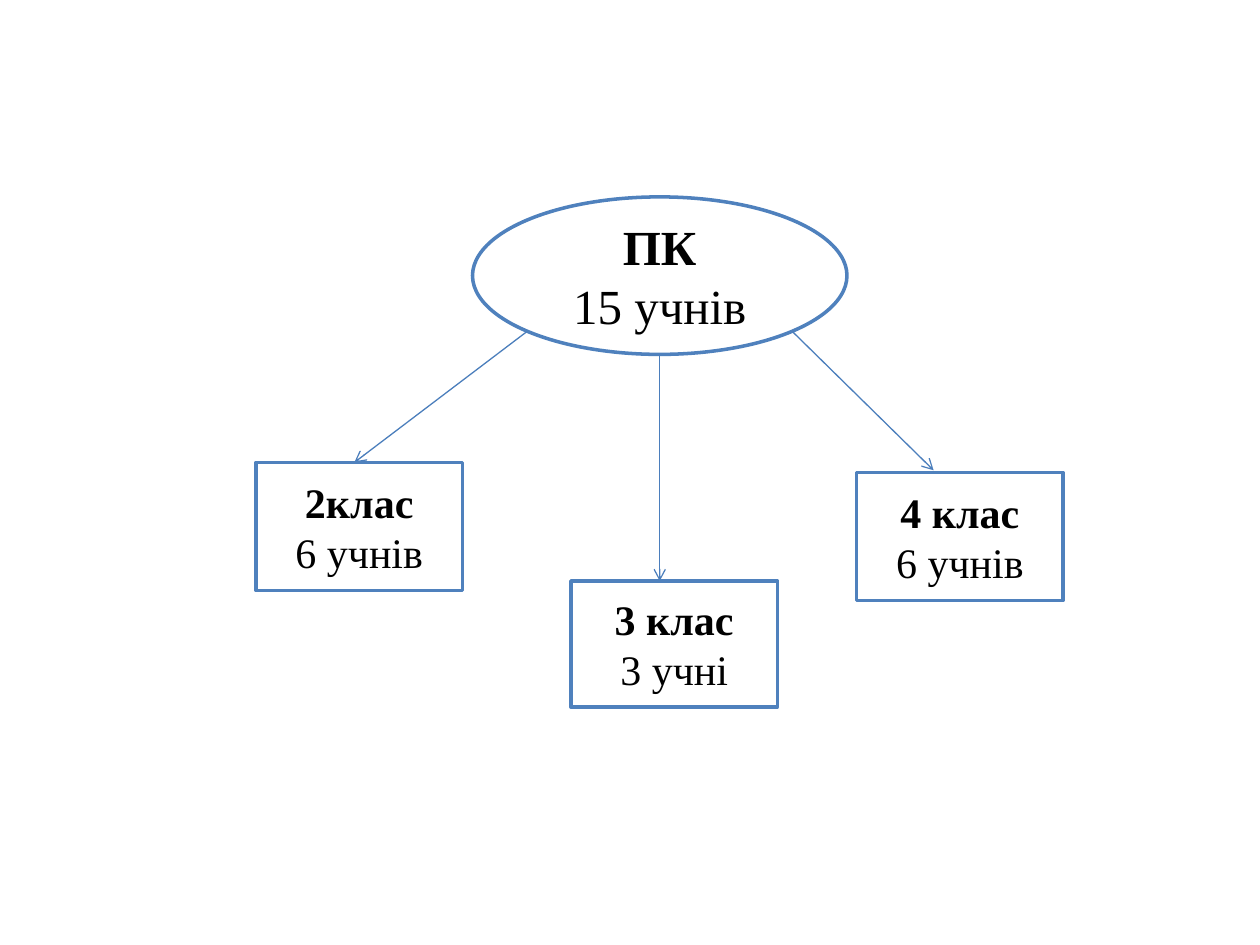
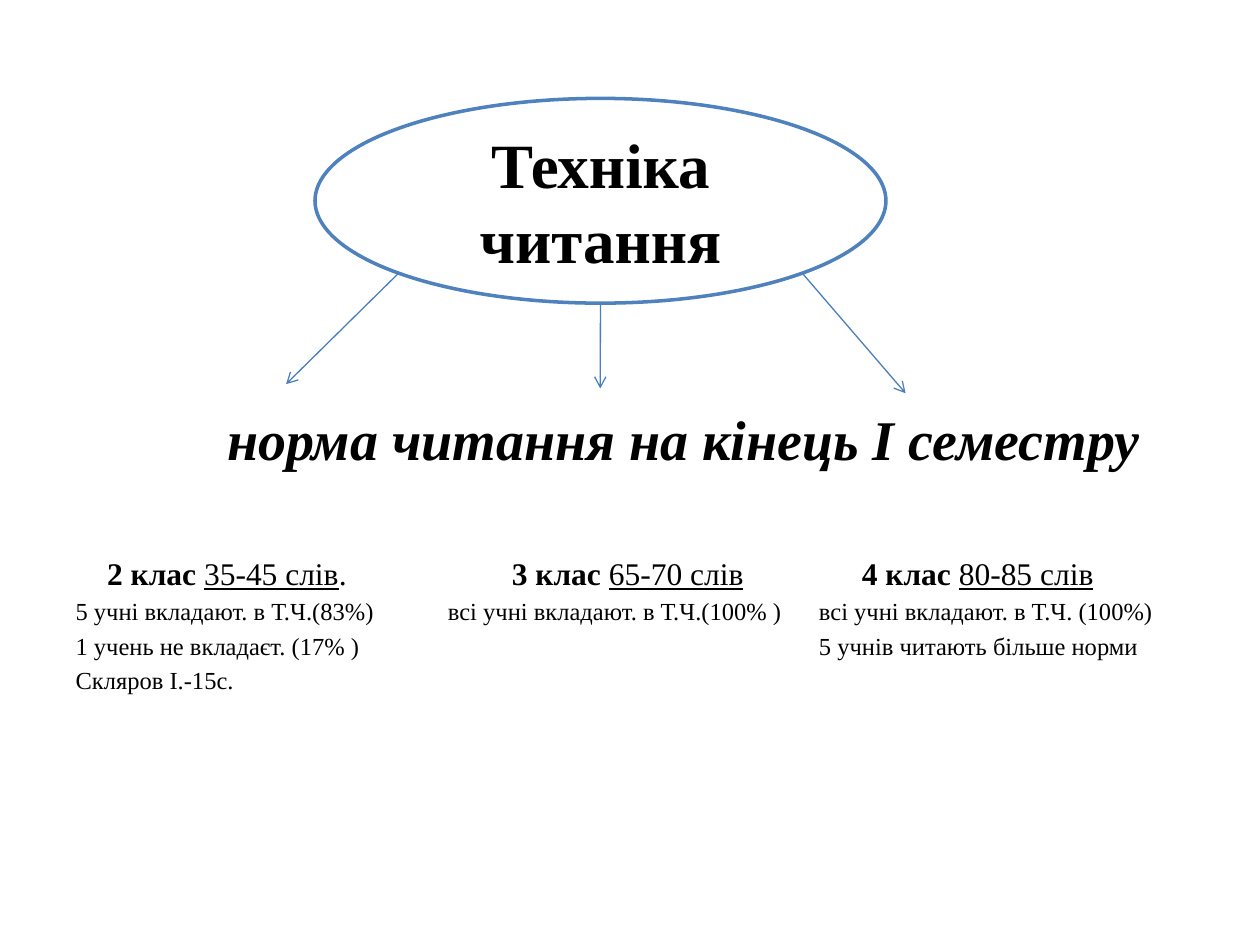
from dataclasses import dataclass
from math import sqrt

from lxml import etree
from pptx import Presentation
from pptx.dml.color import RGBColor
from pptx.enum.shapes import MSO_CONNECTOR, MSO_SHAPE
from pptx.enum.text import MSO_ANCHOR, MSO_AUTO_SIZE, PP_ALIGN
from pptx.oxml.ns import qn
from pptx.util import Pt

ELLIPSE, RECT = MSO_SHAPE.OVAL, MSO_SHAPE.RECTANGLE
STRAIGHT = MSO_CONNECTOR.STRAIGHT
CENTER, LEFT = PP_ALIGN.CENTER, PP_ALIGN.LEFT
MIDDLE, TOP = MSO_ANCHOR.MIDDLE, MSO_ANCHOR.TOP
NO_FIT = MSO_AUTO_SIZE.NONE
TITLE_ONLY_LAYOUT, BLANK_LAYOUT = 5, 6


@dataclass(frozen=True)
class Theme:
    font: str = "Times New Roman"
    text: RGBColor = RGBColor(0, 0, 0)
    fill: RGBColor = RGBColor(255, 255, 255)
    outline: RGBColor = RGBColor(0x4F, 0x81, 0xBD)
    arrow: RGBColor = RGBColor(0x4B, 0x7E, 0xBC)
    outline_width: float = 2
    arrow_width: float = 0.75
    topic_size: int = 36
    hub_size: int = 28
    class_size: int = 24
    heading_size: int = 32
    norm_size: int = 18
    result_size: int = 14


THEME = Theme()


def style(run, size, bold=False, italic=False, underline=False):
    font = run.font
    font.name, font.size, font.color.rgb = THEME.font, Pt(size), THEME.text
    font.bold, font.italic, font.underline = bold, italic, underline


def add_node(slide, kind, box, lines, size):
    """Outlined shape whose first line is bold."""
    s = slide.shapes.add_shape(kind, *map(Pt, box))
    s.shadow.inherit = False
    s.fill.solid()
    s.fill.fore_color.rgb = THEME.fill
    s.line.color.rgb = THEME.outline
    s.line.width = Pt(THEME.outline_width)
    tf = s.text_frame
    tf.word_wrap, tf.vertical_anchor = True, MIDDLE
    tf.text = "\n".join(lines)
    for i, p in enumerate(tf.paragraphs):
        p.alignment = CENTER
        style(p.runs[0], size, bold=i == 0)


def add_arrow(slide, start, end):
    c = slide.shapes.add_connector(STRAIGHT, *map(Pt, (*start, *end)))
    c.line.color.rgb = THEME.arrow
    c.line.width = Pt(THEME.arrow_width)
    sp_pr = c._element.spPr
    etree.SubElement(sp_pr.find(qn("a:ln")), qn("a:tailEnd"), type="arrow")
    etree.SubElement(sp_pr, qn("a:effectLst"))


def add_hub(slide, box, lines, size, targets):
    """Ellipse with arrows from its lower left, bottom and lower right."""
    add_node(slide, ELLIPSE, box, lines, size)
    x, y, w, h = box
    cx, cy = x + w / 2, y + h / 2
    dx, dy = w / 2 / sqrt(2), h / 2 / sqrt(2)
    starts = [(cx - dx, cy + dy), (cx, y + h), (cx + dx, cy + dy)]
    for start, end in zip(starts, targets):
        add_arrow(slide, start, end)


def set_frame(tf):
    """Wrapped text from the top left corner, without margins."""
    tf.word_wrap, tf.auto_size, tf.vertical_anchor = True, NO_FIT, TOP
    tf.margin_left = tf.margin_top = tf.margin_right = tf.margin_bottom = 0


def set_heading(title, box, text):
    title.left, title.top, title.width, title.height = map(Pt, box)
    tf = title.text_frame
    set_frame(tf)
    tf.text = text
    p = tf.paragraphs[0]
    p.alignment = LEFT
    style(p.runs[0], THEME.heading_size, bold=True, italic=True)


def add_class_results(slide, box, indent, norm, results):
    """Norm of one class, indented, with its results below."""
    tf = slide.shapes.add_textbox(*map(Pt, box)).text_frame
    set_frame(tf)

    # Norm
    p = tf.paragraphs[0]
    p._p.get_or_add_pPr().set("marL", str(Pt(indent)))
    name, words, ending = norm
    for text, bold, underline in [(name + " ", True, False),
                                  (words, False, True),
                                  (ending, False, False)]:
        if text:
            r = p.add_run()
            r.text = text
            style(r, THEME.norm_size, bold, underline=underline)

    # Results
    for i, text in enumerate(results):
        p = tf.add_paragraph()
        p.text = text
        p.space_before = Pt(3 if i else 2.5)
        style(p.runs[0], THEME.result_size)


def build_classes_slide(prs):
    slide = prs.slides.add_slide(prs.slide_layouts[BLANK_LAYOUT])
    add_hub(slide, (270, 112.5, 214, 90), ["ПК", "15 учнів"], THEME.hub_size,
            [(202.5, 264.25), (377, 332), (533.5, 268.75)])
    classes = [(146.25, 264.25, 73.25, "2клас", "6 учнів"),
               (326.25, 332, 72, "3 клас", "3 учні"),
               (489.5, 270, 73.25, "4 клас", "6 учнів")]
    for x, y, h, *lines in classes:
        add_node(slide, RECT, (x, y, 118, h), lines, THEME.class_size)


def build_reading_slide(prs):
    slide = prs.slides.add_slide(prs.slide_layouts[TITLE_ONLY_LAYOUT])
    set_heading(slide.shapes.title, (130, 231, 560, 38),
                "норма читання на кінець І семестру")
    columns = [
        (43.2, 18, ("2 клас", "35-45 слів", "."),
         ["5 учні вкладают. в Т.Ч.(83%)", "1 учень не вкладаєт. (17% )",
          "Скляров І.-15с."]),
        (256, 36.5, ("3 клас", "65-70 слів", ""),
         ["всі учні вкладают. в Т.Ч.(100% )"]),
        (468, 24.5, ("4 клас", "80-85 слів", ""),
         ["всі учні вкладают. в Т.Ч. (100%)", "5 учнів читають більше норми"]),
    ]
    for x, indent, norm, results in columns:
        add_class_results(slide, (x, 316.5, 205, 84), indent, norm, results)
    add_hub(slide, (180, 56.25, 326.25, 117), ["Техніка читання"],
            THEME.topic_size, [(163.5, 219.5), (343, 222), (517.5, 224.75)])


def main():
    prs = Presentation()
    prs.slide_width, prs.slide_height = Pt(720), Pt(540)
    build_classes_slide(prs)
    build_reading_slide(prs)
    prs.save("out.pptx")


if __name__ == "__main__":
    main()
